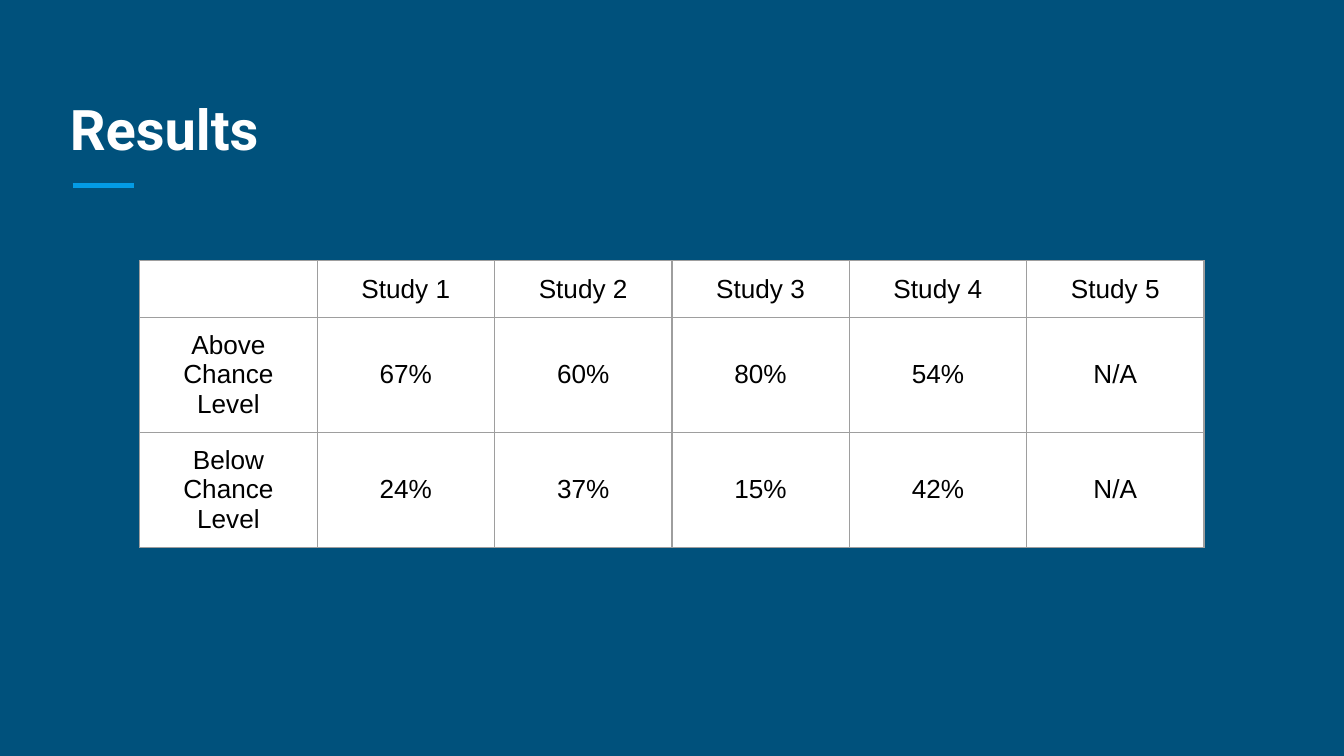
"""Build a results slide with a title, an accent rule and a table of studies."""
from dataclasses import dataclass
from typing import Any

from lxml import etree
from pptx import Presentation
from pptx.dml.color import RGBColor
from pptx.enum import shapes, text
from pptx.oxml import ns
from pptx.util import Inches, Length, Pt

NAVY = RGBColor(0x00, 0x51, 0x7C)
SKY = RGBColor(0x03, 0x9B, 0xE5)
GREY = RGBColor(0x9E, 0x9E, 0x9E)
WHITE = RGBColor(0xFF, 0xFF, 0xFF)
BLACK = RGBColor(0x00, 0x00, 0x00)

WIDTH = Inches(10)
HEIGHT = WIDTH * 9 // 16
BORDER_WIDTH = Pt(0.75)
PADDING = Inches(0.1)
MARGINS = {f"margin_{side}": PADDING for side in ("left", "top", "right", "bottom")}
TITLE_FONT = {"name": "Roboto", "size": Pt(30), "bold": True}
CELL_FONT = {"name": "Arial", "size": Pt(14), "bold": False}


@dataclass(frozen=True)
class Grid:
    left: Length
    top: Length
    column_width: Length
    row_height: Length


@dataclass(frozen=True)
class ResultRow:
    label: str
    values: tuple[str, ...]


TABLE_GRID = Grid(Inches(1.04), Inches(1.94), Inches(1.32), Inches(0.42))
RESULTS = (
    ResultRow("", tuple(f"Study {number}" for number in range(1, 6))),
    ResultRow("Above Chance Level", ("67%", "60%", "80%", "54%", "N/A")),
    ResultRow("Below Chance Level", ("24%", "37%", "15%", "42%", "N/A")),
)


def set_format(target: Any, values: dict[str, Any]) -> None:
    """Set every named attribute on the target."""
    for name, value in values.items():
        setattr(target, name, value)


def style_font(font: Any, values: dict[str, Any], color: RGBColor) -> None:
    """Apply font values and a colour."""
    set_format(font, values)
    font.color.rgb = color


def add_title(slide: Any, title: str) -> None:
    """Place and format the title placeholder."""
    shape = slide.shapes.title
    set_format(shape, {"left": Inches(0.42), "top": Inches(0.55),
                       "width": Inches(9.15), "height": Inches(0.75)})
    frame = shape.text_frame
    frame.text = title
    set_format(frame, MARGINS | {"vertical_anchor": text.MSO_ANCHOR.BOTTOM,
                                 "word_wrap": True,
                                 "auto_size": text.MSO_AUTO_SIZE.NONE})
    paragraph = frame.paragraphs[0]
    paragraph.alignment = text.PP_ALIGN.LEFT
    style_font(paragraph.runs[0].font, TITLE_FONT, WHITE)


def add_accent(slide: Any) -> None:
    """Draw the short rule under the title."""
    y = Inches(1.38)
    accent = slide.shapes.add_connector(
        shapes.MSO_CONNECTOR.STRAIGHT, Inches(0.54), y, Inches(1), y)
    accent.line.color.rgb = SKY
    accent.line.width = Pt(3)
    etree.SubElement(accent._element.spPr, ns.qn("a:effectLst"))


def add_borders(cell: Any) -> None:
    """Outline all four sides of a table cell."""
    properties = cell._tc.get_or_add_tcPr()
    for side in ("lnL", "lnR", "lnT", "lnB"):
        line = etree.SubElement(properties, ns.qn(f"a:{side}"), w=str(int(BORDER_WIDTH)))
        fill = etree.SubElement(line, ns.qn("a:solidFill"))
        etree.SubElement(fill, ns.qn("a:srgbClr"), val=str(GREY))


def fill_cell(cell: Any, content: str) -> None:
    """Write and format one table cell."""
    cell.text = content
    set_format(cell, MARGINS | {"vertical_anchor": text.MSO_ANCHOR.MIDDLE})
    add_borders(cell)
    cell.fill.solid()
    cell.fill.fore_color.rgb = WHITE
    paragraph = cell.text_frame.paragraphs[0]
    paragraph.alignment = text.PP_ALIGN.CENTER
    for run in paragraph.runs:
        style_font(run.font, CELL_FONT, BLACK)
    ending = etree.SubElement(paragraph._p, ns.qn("a:endParaRPr"),
                              sz=str(int(CELL_FONT["size"].pt * 100)))
    etree.SubElement(ending, ns.qn("a:latin"), typeface=CELL_FONT["name"])


def add_results(slide: Any, grid: Grid, results: tuple[ResultRow, ...]) -> None:
    """Add the table with one column for labels and one for each study."""
    rows, columns = len(results), 1 + len(results[0].values)
    table = slide.shapes.add_table(
        rows, columns, grid.left, grid.top,
        grid.column_width * columns, grid.row_height * rows).table
    set_format(table, {"first_row": False, "horz_banding": False})
    for row_index, result in enumerate(results):
        for column_index, content in enumerate((result.label, *result.values)):
            fill_cell(table.cell(row_index, column_index), content)


def main() -> None:
    """Build and save the presentation."""
    presentation = Presentation()
    set_format(presentation, {"slide_width": WIDTH, "slide_height": HEIGHT})
    slide = presentation.slides.add_slide(presentation.slide_layouts.get_by_name("Title Only"))
    slide.background.fill.solid()
    slide.background.fill.fore_color.rgb = NAVY
    add_accent(slide)
    add_title(slide, "Results")
    add_results(slide, TABLE_GRID, RESULTS)
    presentation.save("out.pptx")


if __name__ == "__main__":
    main()
